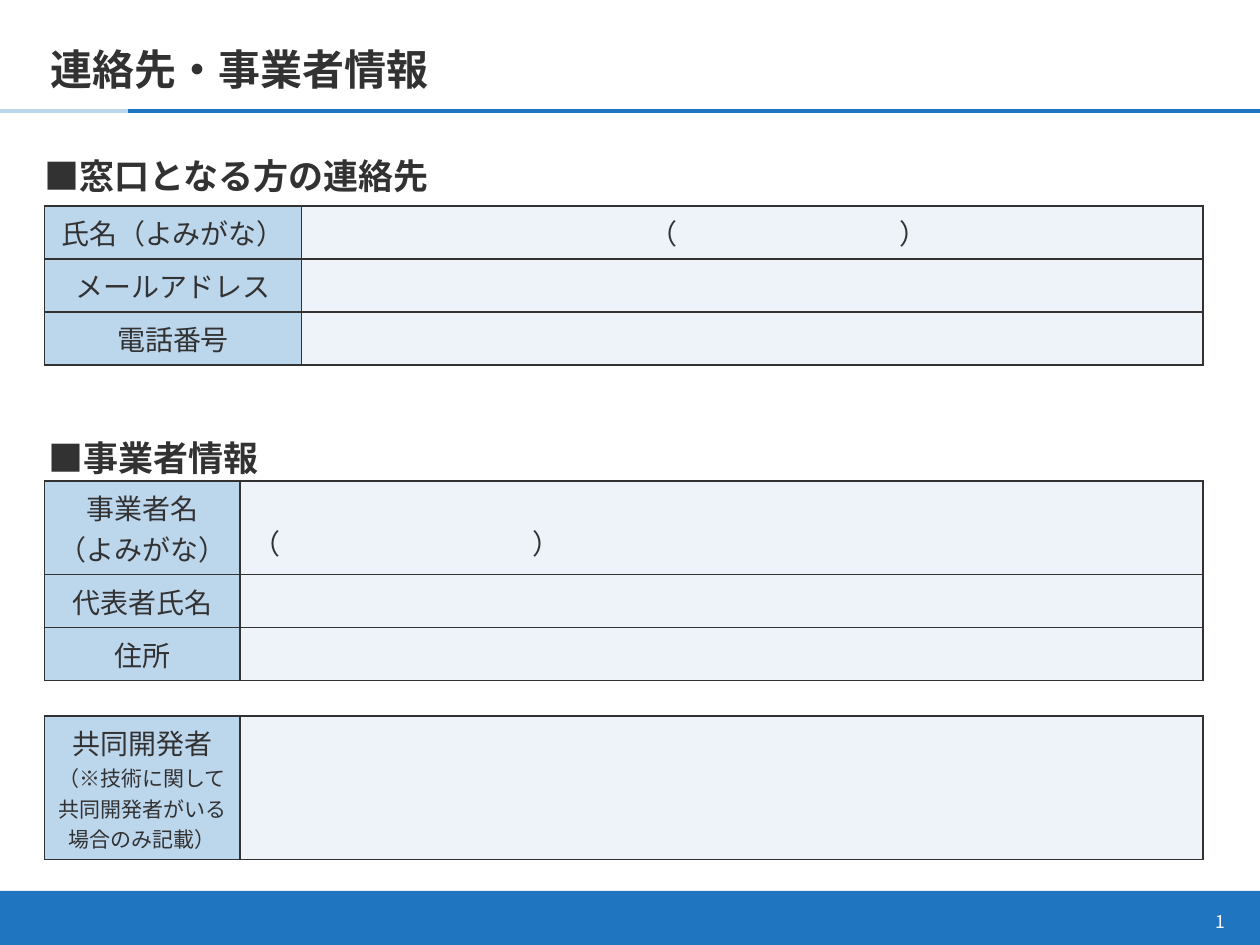
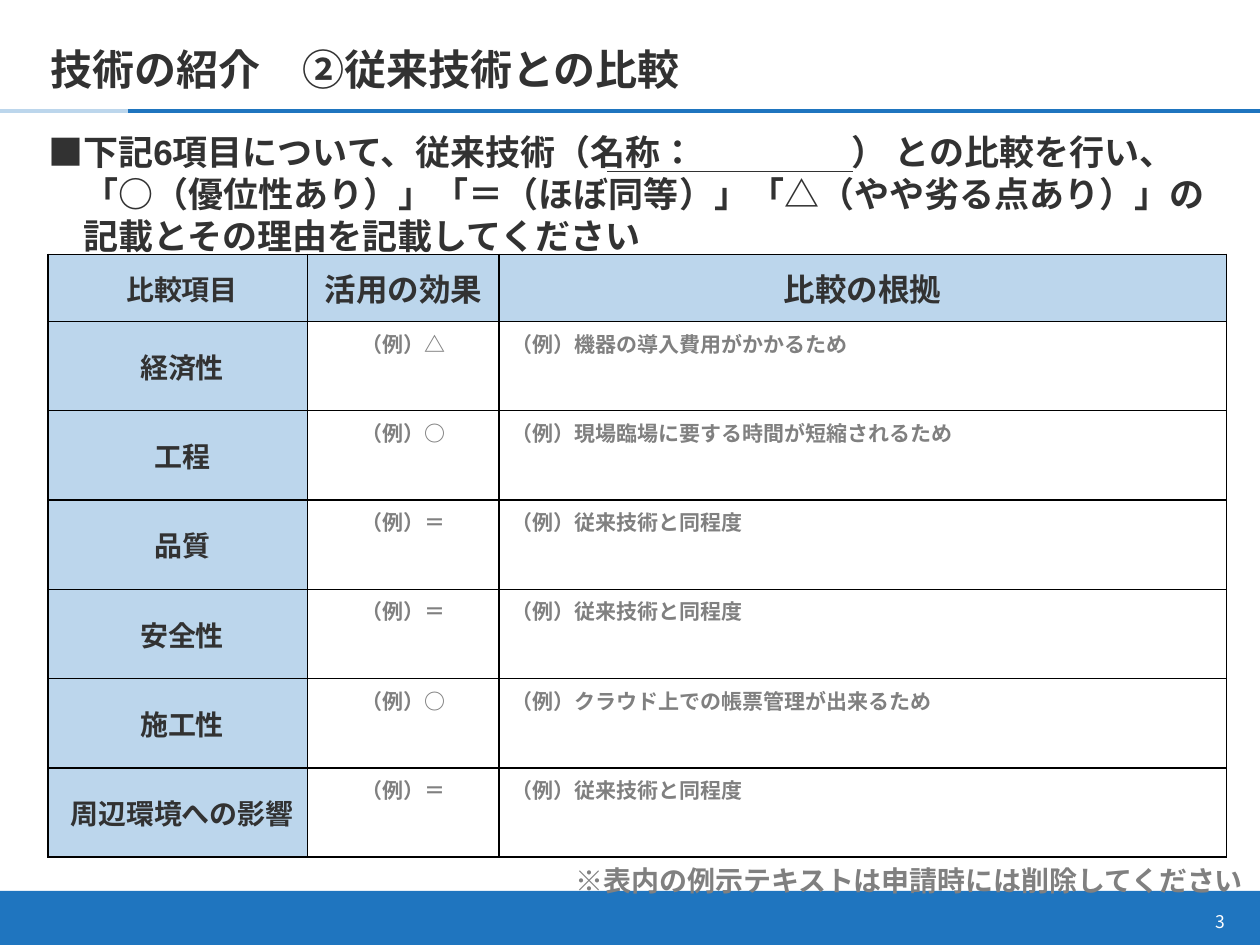
"""Build the contact form slide and the technology comparison slide."""
from lxml import etree
from pptx import Presentation
from pptx import util as u
from pptx.dml.color import RGBColor
from pptx.enum import shapes, text
from pptx.oxml import ns

Cm, Pt = u.Cm, u.Pt

INK = RGBColor(0x32, 0x32, 0x32)
BLUE = RGBColor(0x1F, 0x75, 0xBF)
PALE_BLUE = RGBColor(0xBC, 0xD6, 0xEC)
ENTRY = RGBColor(0xEE, 0xF3, 0xF9)
GREY = RGBColor(0x80, 0x80, 0x80)
WHITE = RGBColor(0xFF, 0xFF, 0xFF)
BLACK = RGBColor(0x00, 0x00, 0x00)

JAPANESE = "Noto Sans CJK JP"
HEADING_FONT = "Arial"
TABLE_FONT = "Calibri"
SLIDE_WIDTH, SLIDE_HEIGHT = 25.4, 19.05
BAND_HEIGHT = 1.09
RULE_Y, RULE_SPLIT = 2.24, 2.59
FORM_LEFT = 0.9
FORM_ROW = 1.07

EFFECTS = [
    ("経済性", "△", "機器の導入費用がかかるため"),
    ("工程", "○", "現場臨場に要する時間が短縮されるため"),
    ("品質", "＝", "従来技術と同程度"),
    ("安全性", "＝", "従来技術と同程度"),
    ("施工性", "○", "クラウド上での帳票管理が出来るため"),
    ("周辺環境への影響", "＝", "従来技術と同程度"),
]


def style(paragraph, size, color=INK, font=TABLE_FONT, bold=False, align=text.PP_ALIGN.LEFT):
    """Set the alignment, language and Latin and Japanese fonts of a paragraph."""
    paragraph.alignment = align
    paragraph.font.size = Pt(size)
    paragraph.font.bold = bold
    paragraph.font.color.rgb = color
    paragraph.font.name = font
    defaults = paragraph._p.pPr.find(ns.qn("a:defRPr"))
    etree.SubElement(defaults, ns.qn("a:ea"), typeface=JAPANESE)
    for run in paragraph.runs:
        run._r.get_or_add_rPr().set("lang", "ja-JP")


def set_tabs(paragraph, *stops):
    """Add left tab stops, given in centimetres, to a styled paragraph."""
    tab_list = etree.Element(ns.qn("a:tabLst"))
    for stop in stops:
        etree.SubElement(tab_list, ns.qn("a:tab"), pos=str(Cm(stop)), algn="l")
    paragraph._p.pPr.find(ns.qn("a:defRPr")).addprevious(tab_list)


def add_caption(slide, left, top, width, height, lines, size=20, color=INK,
                font=HEADING_FONT, bold=True, align=text.PP_ALIGN.LEFT):
    """Add text with tight line spacing and return its paragraphs."""
    frame = slide.shapes.add_textbox(Cm(left), Cm(top), Cm(width), Cm(height)).text_frame
    frame.word_wrap = True
    frame.margin_left = frame.margin_right = frame.margin_top = frame.margin_bottom = 0
    frame.text = "\n".join(lines)
    for paragraph in frame.paragraphs:
        style(paragraph, size, color, font, bold, align)
        paragraph.line_spacing = Pt(size * 1.2)
    return frame.paragraphs


def add_rule(slide, start, end, y, color, weight):
    """Draw a horizontal line."""
    rule = slide.shapes.add_connector(
        shapes.MSO_CONNECTOR.STRAIGHT, Cm(start), Cm(y), Cm(end), Cm(y))
    rule.line.color.rgb = color
    rule.line.width = Pt(weight)
    etree.SubElement(rule._element.spPr, ns.qn("a:effectLst"))


def add_page(deck, heading, number):
    """Add a slide with its title, rules, footer band and page number."""
    slide = deck.slides.add_slide(deck.slide_layouts[5])
    title = slide.shapes.title
    title.left, title.top, title.width, title.height = Cm(0.76), Cm(0.76), Cm(20.5), Cm(1.14)
    frame = title.text_frame
    frame.text = heading
    frame.auto_size = text.MSO_AUTO_SIZE.NONE
    frame.vertical_anchor = text.MSO_ANCHOR.BOTTOM
    frame.margin_left = frame.margin_right = Cm(0.25)
    frame.margin_top = frame.margin_bottom = 0
    style(frame.paragraphs[0], 24, font=JAPANESE, bold=True)

    band = slide.shapes.add_shape(
        shapes.MSO_SHAPE.RECTANGLE, 0, Cm(SLIDE_HEIGHT - BAND_HEIGHT),
        Cm(SLIDE_WIDTH), Cm(BAND_HEIGHT))
    band.shadow.inherit = False
    band.fill.solid()
    band.fill.fore_color.rgb = BLUE
    band.line.fill.background()
    add_caption(slide, 24.5, 18.36, 0.56, 0.6, [number], 10, WHITE, JAPANESE, False)
    add_rule(slide, 0, RULE_SPLIT, RULE_Y, PALE_BLUE, 2.5)
    add_rule(slide, RULE_SPLIT, SLIDE_WIDTH, RULE_Y, BLUE, 2.5)
    return slide


def add_grid(slide, left, top, widths, heights):
    """Add an unstyled table with the given column widths and row heights."""
    table = slide.shapes.add_table(
        len(heights), len(widths), Cm(left), Cm(top),
        Cm(sum(widths)), Cm(sum(heights))).table
    table.first_row = table.horz_banding = False
    for column, width in zip(table.columns, widths):
        column.width = Cm(width)
    for row, height in zip(table.rows, heights):
        row.height = Cm(height)
    return table


def fill_cell(cell, wording, fill, border, size=16, **font):
    """Write a cell and set its fill, borders and fonts."""
    cell.text = wording
    for paragraph in cell.text_frame.paragraphs:
        style(paragraph, size, **font)
    cell.fill.solid()
    cell.fill.fore_color.rgb = fill
    properties = cell._tc.get_or_add_tcPr()
    for position, side in enumerate(("lnL", "lnR", "lnT", "lnB")):
        edge = etree.Element(ns.qn(f"a:{side}"), w=str(Pt(1)))
        paint = etree.SubElement(edge, ns.qn("a:solidFill"))
        etree.SubElement(paint, ns.qn("a:srgbClr"), val=str(border))
        properties.insert(position, edge)


def add_form(slide, top, widths, heights, entries):
    """Add a form table of labels with fields to fill in."""
    table = add_grid(slide, FORM_LEFT, top, widths, heights)
    for row, (label, field) in enumerate(entries):
        fill_cell(table.cell(row, 0), label, PALE_BLUE, INK, align=text.PP_ALIGN.CENTER)
        fill_cell(table.cell(row, 1), field, ENTRY, INK)
    return table


def add_comparison(slide):
    """Add the table that rates the technology on six items."""
    center = text.PP_ALIGN.CENTER
    table = add_grid(slide, 0.97, 5.13, [5.23, 3.86, 14.66], [1.35] + [1.8] * len(EFFECTS))
    for column, (heading, size) in enumerate(
            [("比較項目", 16), ("活用の効果", 18), ("比較の根拠", 18)]):
        fill_cell(table.cell(0, column), heading, PALE_BLUE, BLACK, size, bold=True, align=center)
        table.cell(0, column).vertical_anchor = text.MSO_ANCHOR.MIDDLE
    for row, (item, mark, reason) in enumerate(EFFECTS, 1):
        label, effect, basis = table.rows[row].cells
        fill_cell(label, item, PALE_BLUE, BLACK, bold=True, align=center)
        label.vertical_anchor = text.MSO_ANCHOR.MIDDLE
        fill_cell(effect, f"（例）{mark}", WHITE, BLACK, 12, color=GREY, bold=True, align=center)
        fill_cell(basis, f"（例）{reason}", WHITE, BLACK, 12, color=GREY, bold=True)
    for row in table.rows:
        row.cells[0].margin_left, row.cells[0].margin_right = Cm(0.34), Cm(0.17)


def build_contacts(deck):
    """Build the slide for contact and company details."""
    slide = add_page(deck, "連絡先・事業者情報", "1")
    add_caption(slide, 0.89, 3.12, 22.1, 1.02, ["■窓口となる方の連絡先"])
    contact = add_form(slide, 4.15, [5.18, 18.17], [FORM_ROW] * 3, [
        ("氏名（よみがな）", "\t（\t）"), ("メールアドレス", ""), ("電話番号", "")])
    set_tabs(contact.cell(0, 1).text_frame.paragraphs[0], 6.75, 11.8)

    add_caption(slide, 0.97, 8.79, 22.1, 1.02, ["■事業者情報"])
    company_columns = [3.94, 19.41]
    company = add_form(slide, 9.7, company_columns, [1.88, FORM_ROW, FORM_ROW], [
        ("事業者名\n（よみがな）", "（\t）"), ("代表者氏名", ""), ("住所", "")])
    reading = company.cell(0, 1)
    reading.vertical_anchor = text.MSO_ANCHOR.BOTTOM
    reading.margin_bottom = Cm(0.25)
    set_tabs(reading.text_frame.paragraphs[0], 5.64)

    partner = add_form(slide, 14.43, company_columns, [2.9], [
        ("共同開発者\n（※技術に関して共同開発者がいる場合のみ記載）", "")])
    partner.cell(0, 0).text_frame.paragraphs[1].font.size = Pt(12)


def build_comparison(deck):
    """Build the slide comparing the technology with the conventional one."""
    slide = add_page(deck, "技術の紹介　②従来技術との比較", "3")
    add_comparison(slide)
    request, *details = add_caption(slide, 0.97, 2.64, 24.1, 2.49, [
        "■下記6項目について、従来技術（名称：\t） との比較を行い、",
        "「○（優位性あり）」「＝（ほぼ同等）」「△（やや劣る点あり）」の",
        "記載とその理由を記載してください"])
    set_tabs(request, 16.2)
    add_rule(slide, 12.24, 17.2, 3.46, INK, 0.75)
    for detail in details:
        detail._p.pPr.set("marL", str(Pt(20)))
    add_caption(slide, 7.8, 17.4, 17.27, 0.74,
                ["※表内の例示テキストは申請時には削除してください"],
                16, GREY, align=text.PP_ALIGN.RIGHT)


def main():
    """Build and save the deck."""
    deck = Presentation()
    deck.slide_width, deck.slide_height = Cm(SLIDE_WIDTH), Cm(SLIDE_HEIGHT)
    build_contacts(deck)
    build_comparison(deck)
    deck.save("out.pptx")


if __name__ == "__main__":
    main()
